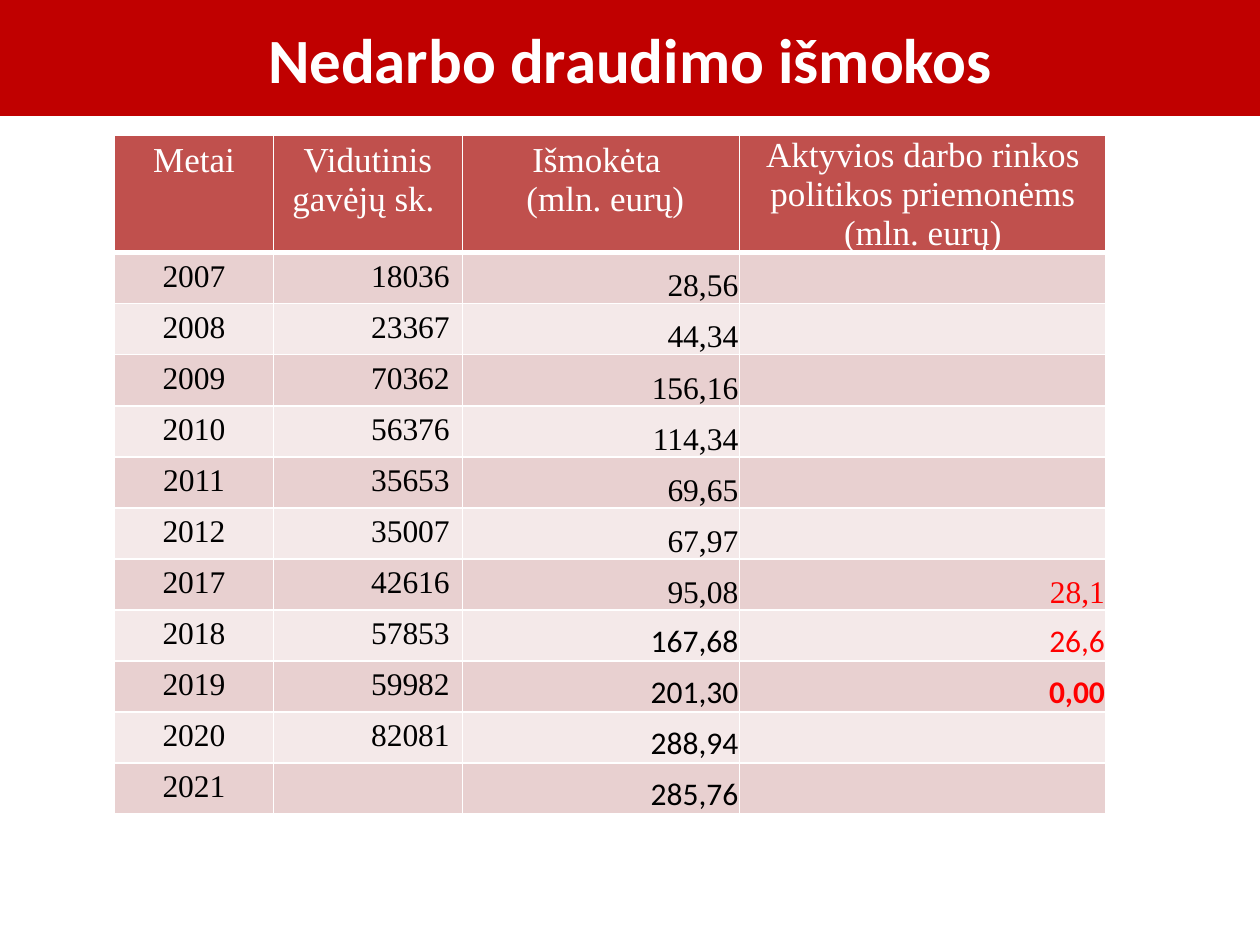
from dataclasses import dataclass

import lxml.etree
import pptx
import pptx.dml.color
import pptx.enum.text
import pptx.oxml.ns
import pptx.util

Inches = pptx.util.Inches
Align = pptx.enum.text.PP_ALIGN
Anchor = pptx.enum.text.MSO_ANCHOR


@dataclass(frozen=True)
class Theme:
    banner: str = "C00000"
    header: str = "C0504D"
    bands: tuple = ("E8D0D0", "F4E9E9")
    white: str = "FFFFFF"
    black: str = "000000"
    red: str = "FF0000"
    sans: str = "Calibri"
    serif: str = "Times New Roman"
    title: int = 36
    head: int = 20
    body: int = 18


@dataclass(frozen=True)
class Style:
    size: int
    color: str
    face: str
    align: Align
    bold: bool = False
    tight: bool = False  # small insets, text at the bottom


@dataclass(frozen=True)
class Entry:
    year: str
    count: str
    paid: str
    active: str = ""
    face: str = Theme.serif
    bold: bool = False


THEME = Theme()
WIDTHS = (1.26, 1.5, 2.2, 2.91)
HEAD_H, TABLE_H = 0.93, 5.39
HEADS = (
    "Metai",
    "Vidutinis gavėjų sk. ",
    "Išmokėta \n (mln. eurų)",
    "Aktyvios darbo rinkos politikos priemonėms (mln. eurų)",
)
ENTRIES = (
    Entry("2007", "18036", "28,56"),
    Entry("2008", "23367", "44,34"),
    Entry("2009", "70362", "156,16"),
    Entry("2010", "56376", "114,34"),
    Entry("2011", "35653", "69,65"),
    Entry("2012", "35007", "67,97"),
    Entry("2017", "42616", "95,08", "28,1"),
    Entry("2018", "57853", "167,68", "26,6", THEME.sans),
    Entry("2019", "59982", "201,30", "0,00", THEME.sans, True),
    Entry("2020", "82081", "288,94", face=THEME.sans),
    Entry("2021", "", "285,76", face=THEME.sans),
)


def rgb(code: str) -> pptx.dml.color.RGBColor:
    return pptx.dml.color.RGBColor.from_string(code)


def set_text(frame, text: str, style: Style) -> None:
    frame.text = text
    for para in frame.paragraphs:
        para.alignment = style.align
        para.font.size = pptx.util.Pt(style.size)
        para.font.name = style.face
        para.font.bold = style.bold
        para.font.color.rgb = rgb(style.color)


def add_edges(cell, base: int = 1) -> None:
    """Draw white cell borders; base is the bottom width in points."""
    qn = pptx.oxml.ns.qn
    props = cell._tc.get_or_add_tcPr()
    for side, width in (("L", 1), ("R", 1), ("T", 1), ("B", base)):
        line = lxml.etree.SubElement(
            props, qn(f"a:ln{side}"), w=str(pptx.util.Pt(width)))
        fill = lxml.etree.SubElement(line, qn("a:solidFill"))
        lxml.etree.SubElement(fill, qn("a:srgbClr"), val=THEME.white)


def fill_cell(cell, text: str, fill: str, style: Style, base: int = 1) -> None:
    add_edges(cell, base)
    cell.fill.solid()
    cell.fill.fore_color.rgb = rgb(fill)
    if style.tight:
        cell.margin_left = cell.margin_right = cell.margin_top = Inches(0.01)
        cell.margin_bottom = 0
        cell.vertical_anchor = Anchor.BOTTOM
    set_text(cell.text_frame, text, style)


def add_title(slide, text: str) -> None:
    title = slide.shapes.title
    title.left, title.top = 0, 0
    title.width, title.height = Inches(10), Inches(0.92)
    title.fill.solid()
    title.fill.fore_color.rgb = rgb(THEME.banner)
    title.text_frame.vertical_anchor = Anchor.MIDDLE
    set_text(title.text_frame, text, Style(
        THEME.title, THEME.white, THEME.sans, Align.CENTER, bold=True))


def add_grid(slide) -> None:
    table = slide.shapes.add_table(
        len(ENTRIES) + 1, len(WIDTHS), Inches(0.91), Inches(1.07),
        Inches(sum(WIDTHS)), Inches(TABLE_H)).table
    table.first_row = table.horz_banding = False
    for col, width in zip(table.columns, WIDTHS):
        col.width = Inches(width)
    for row in table.rows:
        row.height = Inches((TABLE_H - HEAD_H) / len(ENTRIES))
    table.rows[0].height = Inches(HEAD_H)

    # Header row
    for col, text in enumerate(HEADS):
        style = Style(THEME.head, THEME.white, THEME.serif, Align.CENTER,
                      tight=col == len(HEADS) - 1)
        fill_cell(table.cell(0, col), text, THEME.header, style, base=3)

    # One banded row a year
    size, black, serif = THEME.body, THEME.black, THEME.serif
    for row, entry in enumerate(ENTRIES, 1):
        parts = (
            (entry.year, Style(size, black, serif, Align.CENTER)),
            (entry.count, Style(size, black, serif, Align.RIGHT)),
            (entry.paid, Style(size, black, entry.face, Align.RIGHT,
                               tight=True)),
            (entry.active, Style(size, THEME.red, entry.face, Align.RIGHT,
                                 entry.bold, tight=bool(entry.active))),
        )
        for col, (text, style) in enumerate(parts):
            fill_cell(table.cell(row, col), text,
                      THEME.bands[(row - 1) % 2], style)


def main() -> None:
    deck = pptx.Presentation()
    deck.slide_width, deck.slide_height = Inches(10), Inches(7.5)
    slide = deck.slides.add_slide(deck.slide_layouts[5])  # title only
    add_title(slide, "Nedarbo draudimo išmokos")
    add_grid(slide)
    deck.save("out.pptx")


if __name__ == "__main__":
    main()
